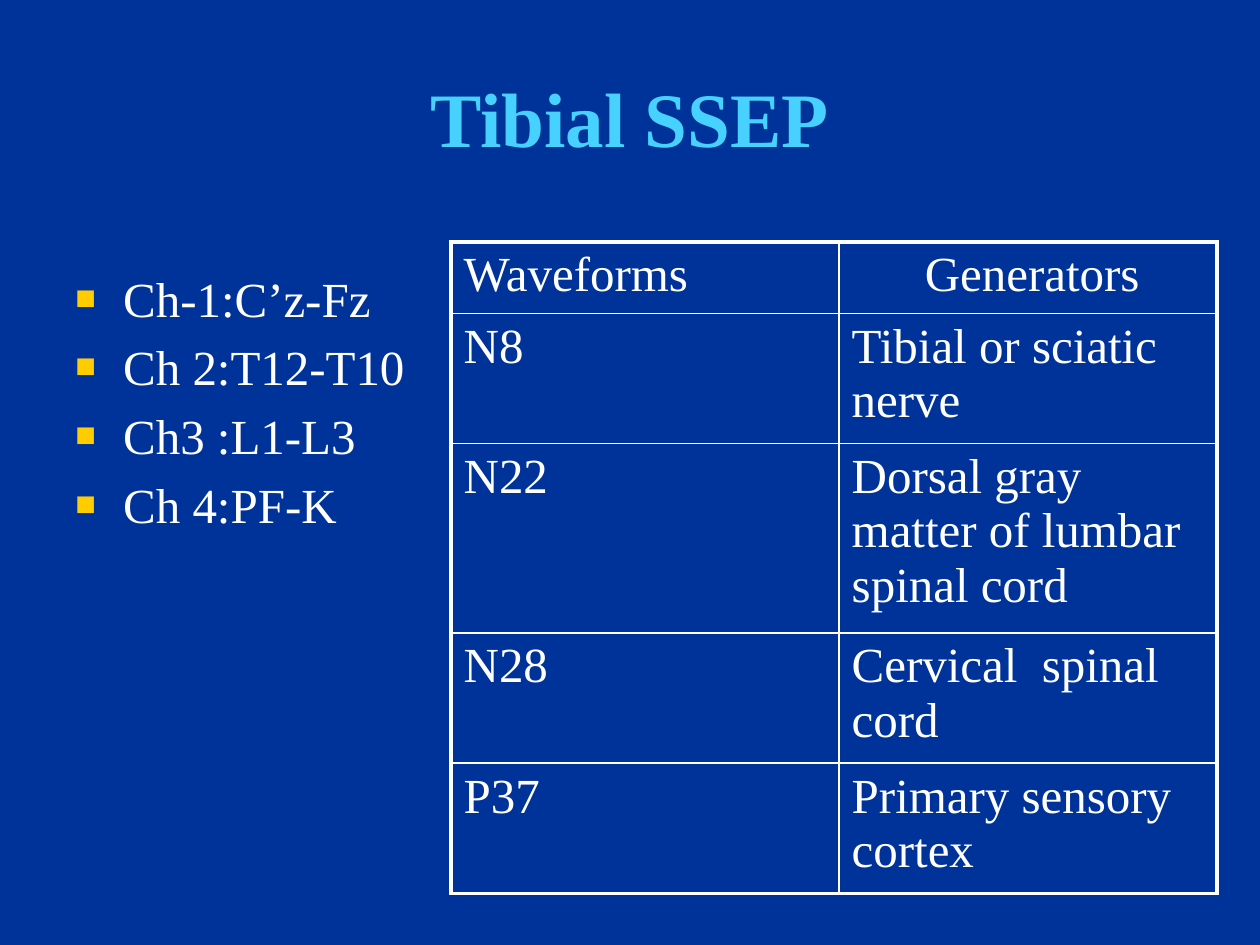
from dataclasses import dataclass

from lxml import etree
from pptx import Presentation
from pptx.dml.color import RGBColor
from pptx.enum.text import MSO_ANCHOR, PP_ALIGN
from pptx.oxml.ns import qn
from pptx.util import Inches, Pt

MID, TOP = MSO_ANCHOR.MIDDLE, MSO_ANCHOR.TOP
LEFT, MIDDLE = PP_ALIGN.LEFT, PP_ALIGN.CENTER


@dataclass(frozen=True)
class Theme:
    font: str = "Times New Roman"
    back: str = "003399"
    head: str = "47D1FF"
    text: str = "FFFFFF"
    mark: str = "FFCC00"
    big: int = 44
    body: int = 28
    thin: float = 1
    thick: float = 2.25


THEME = Theme()
LEADS = ["Ch-1:C’z-Fz", "Ch 2:T12-T10", "Ch3 :L1-L3", "Ch 4:PF-K"]
WAVES = [
    ("Waveforms", "Generators"),
    ("N8", "Tibial or sciatic nerve"),
    ("N22", "Dorsal gray matter of lumbar spinal cord"),
    ("N28", "Cervical  spinal cord"),
    ("P37", "Primary sensory cortex"),
]
COLS = [3.08, 3]
ROWS = [0.53, 0.96, 1.39, 0.96, 0.96]


def write(para, text, size=THEME.body, color=THEME.text, bold=False, align=LEFT):
    """Put one formatted run in a paragraph."""
    para.alignment = align
    run = para.add_run()
    run.text = text
    font = run.font
    font.name, font.size, font.bold = THEME.font, Pt(size), bold
    font.color.rgb = RGBColor.from_string(color)


def add(parent, tag, **attrs):
    """Append an XML child in the drawing namespace."""
    return etree.SubElement(parent, qn(tag), {k: str(v) for k, v in attrs.items()})


def bullet(para):
    """Give a paragraph a hanging square and space above."""
    props = para._p.get_or_add_pPr()
    hang = Inches(0.38)
    props.set("marL", str(hang))
    props.set("indent", str(-hang))
    add(add(props, "a:spcBef"), "a:spcPct", val=20000)
    add(add(props, "a:buClr"), "a:srgbClr", val=THEME.mark)
    add(props, "a:buSzPct", val=70000)
    add(props, "a:buFont", typeface=THEME.font)
    add(props, "a:buChar", char="■")


def border(cell, outer):
    """Rule all four sides, thicker on the outer ones."""
    props = cell._tc.get_or_add_tcPr()
    for spot, side in enumerate("LRTB"):
        width = THEME.thick if side in outer else THEME.thin
        line = etree.Element(qn(f"a:ln{side}"), w=str(Pt(width)))
        add(add(line, "a:solidFill"), "a:srgbClr", val=THEME.text)
        props.insert(spot, line)


def add_title(slide, box, text):
    shape = slide.shapes.title
    shape.left, shape.top, shape.width, shape.height = map(Inches, box)
    frame = shape.text_frame
    frame.vertical_anchor = MID
    write(frame.paragraphs[0], text, size=THEME.big, color=THEME.head,
          bold=True, align=MIDDLE)


def add_list(slide, box, items):
    frame = slide.shapes.add_textbox(*map(Inches, box)).text_frame
    frame.word_wrap = True
    for i, item in enumerate(items):
        para = frame.add_paragraph() if i else frame.paragraphs[0]
        write(para, item)
        bullet(para)


def add_grid(slide, box, data):
    last, end = len(data) - 1, len(COLS) - 1
    table = slide.shapes.add_table(len(data), len(COLS), *map(Inches, box)).table
    for col, width in zip(table.columns, COLS):
        col.width = Inches(width)
    for r, (row, high) in enumerate(zip(data, ROWS)):
        table.rows[r].height = Inches(high)
        for c, text in enumerate(row):
            cell = table.cell(r, c)
            cell.fill.background()
            cell.vertical_anchor = TOP
            write(cell.text_frame.paragraphs[0], text)
            edges = {"L": c == 0, "R": c == end, "T": r == 0, "B": r == last}
            border(cell, [side for side, on in edges.items() if on])
    # The second heading is set in from the column edge
    table.cell(0, end).margin_left = Inches(0.68)


def main():
    deck = Presentation()
    deck.slide_width, deck.slide_height = Inches(10), Inches(7.5)
    slide = deck.slides.add_slide(deck.slide_layouts[5])
    fill = slide.background.fill
    fill.solid()
    fill.fore_color.rgb = RGBColor.from_string(THEME.back)

    add_title(slide, (0.5, 0.3, 9, 1.25), "Tibial SSEP")
    add_list(slide, (0.5, 2.08, 3.33, 4.62), LEADS)
    add_grid(slide, (3.58, 1.92, sum(COLS), sum(ROWS)), WAVES)
    deck.save("out.pptx")


if __name__ == "__main__":
    main()
